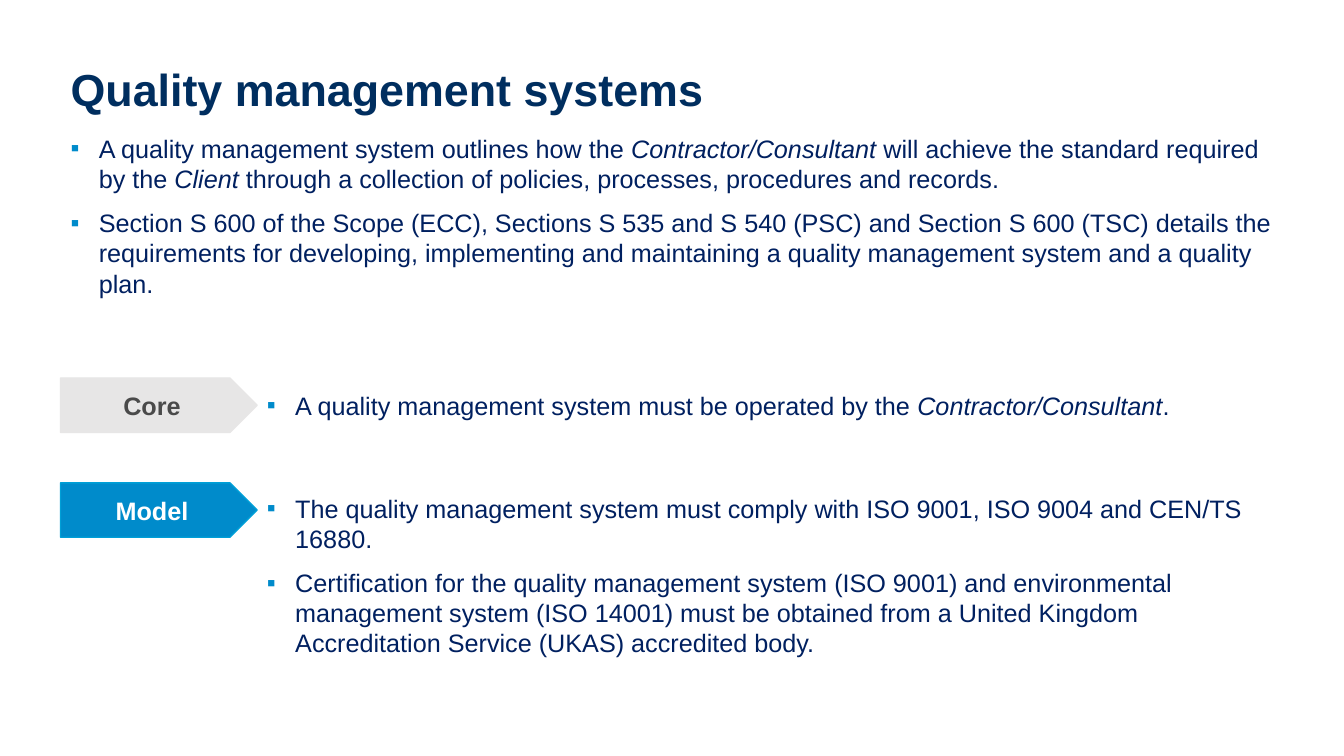
import pptx
import pptx.dml.color
import pptx.enum.shapes
import pptx.enum.text
import pptx.util
import lxml.etree

WIDTH = pptx.util.Inches(13.33)
HEIGHT = pptx.util.Inches(7.5)
MARGIN = 4.5
CONTENT = 91
LABEL = 14.63
LABEL_HEIGHT = 7.2
INDENT = pptx.util.Inches(0.28)
NAVY = "002E5F"
INK = "002060"
BLUE = "008BCB"

INTRODUCTION = [
    "A quality management system outlines how the *Contractor/Consultant *will achieve "
    "the standard required by the *Client* through a collection of policies, processes, "
    "procedures and records.",
    "Section S 600 of the Scope (ECC), Sections S 535 and S 540 (PSC) and Section S 600 "
    "(TSC) details the requirements for developing, implementing and maintaining a quality "
    "management system and a quality plan.",
]
CORE_POINTS = [
    "A quality management system must be operated by the *Contractor/Consultant*.",
]
MODEL_POINTS = [
    "The quality management system must comply with ISO 9001, ISO 9004 and CEN/TS 16880.",
    "Certification for the quality management system (ISO 9001) and environmental management "
    "system (ISO 14001) must be obtained from a United Kingdom Accreditation Service (UKAS) "
    "accredited body.",
]


def colour(value):
    return pptx.dml.color.RGBColor.from_string(value)


def share(left, top, width, height):
    return [
        round(length * percent / 100)
        for length, percent in zip((WIDTH, HEIGHT, WIDTH, HEIGHT), (left, top, width, height))
    ]


def apply(target, values):
    for name, value in values.items():
        setattr(target, name, value)


def place(box, area):
    apply(box, dict(zip(("left", "top", "width", "height"), share(*area))))


def add_span(paragraph, text, shade, **values):
    span = paragraph.add_run()
    span.text = text
    apply(span.font, {"name": "Arial", "size": pptx.util.Pt(18), **values})
    span.font.color.rgb = colour(shade)


def add_bullet(paragraph):
    properties = paragraph._p.get_or_add_pPr()
    properties.set("marL", str(INDENT))
    properties.set("indent", str(-INDENT))
    namespace = "{%s}" % properties.nsmap["a"]
    tint = lxml.etree.SubElement(properties, namespace + "buClr")
    lxml.etree.SubElement(tint, namespace + "srgbClr", val=BLUE)
    lxml.etree.SubElement(properties, namespace + "buFont", typeface="Arial")
    lxml.etree.SubElement(properties, namespace + "buChar", char="▪")


def fill_list(box, points):
    frame = box.text_frame
    apply(frame, {
        "word_wrap": True,
        "auto_size": pptx.enum.text.MSO_AUTO_SIZE.NONE,
        "vertical_anchor": pptx.enum.text.MSO_ANCHOR.TOP,
    })
    for number, point in enumerate(points):
        paragraph = frame.add_paragraph() if number else frame.paragraphs[0]
        add_bullet(paragraph)
        paragraph.space_before = pptx.util.Pt(10 if number else 0)
        for order, text in enumerate(point.split("*")):
            add_span(paragraph, text, INK, italic=order % 2 == 1)


def fill_title(box, text):
    place(box, (MARGIN, 5.33, CONTENT, 13.73))
    apply(box.text_frame, {
        "auto_size": pptx.enum.text.MSO_AUTO_SIZE.NONE,
        "vertical_anchor": pptx.enum.text.MSO_ANCHOR.MIDDLE,
    })
    paragraph = box.text_frame.paragraphs[0]
    apply(paragraph, {"alignment": pptx.enum.text.PP_ALIGN.LEFT, "line_spacing": 0.9})
    add_span(paragraph, text, NAVY, size=pptx.util.Pt(32), bold=True)


def add_label(page, text, top, fill, line, shade):
    label = page.shapes.add_shape(
        pptx.enum.shapes.MSO_SHAPE.PENTAGON, *share(MARGIN, top, LABEL, LABEL_HEIGHT)
    )
    label.shadow.inherit = False
    label.fill.solid()
    label.fill.fore_color.rgb = colour(fill)
    label.line.color.rgb = colour(line)
    label.line.width = pptx.util.Pt(1)
    label.text_frame.vertical_anchor = pptx.enum.text.MSO_ANCHOR.MIDDLE
    paragraph = label.text_frame.paragraphs[0]
    paragraph.alignment = pptx.enum.text.PP_ALIGN.CENTER
    add_span(paragraph, text, shade, bold=True)


def add_points(page, points, top, height):
    area = share(MARGIN + LABEL, top, CONTENT - LABEL, height)
    fill_list(page.shapes.add_textbox(*area), points)


def main():
    deck = pptx.Presentation()
    apply(deck, {"slide_width": WIDTH, "slide_height": HEIGHT})
    page = deck.slides.add_slide(deck.slide_layouts[1])
    fill_title(page.shapes.title, "Quality management systems")
    body = page.placeholders[1]
    place(body, (MARGIN, 16.93, CONTENT, 65.47))
    fill_list(body, INTRODUCTION)
    add_label(page, "Core", 50, "E7E6E6", "E7E6E6", "4A4A4A")
    add_points(page, CORE_POINTS, 50.93, 5.33)
    add_label(page, "Model", 63.87, BLUE, "009FD7", "FFFFFF")
    add_points(page, MODEL_POINTS, 64.53, 30.67)
    deck.save("out.pptx")


if __name__ == "__main__":
    main()
